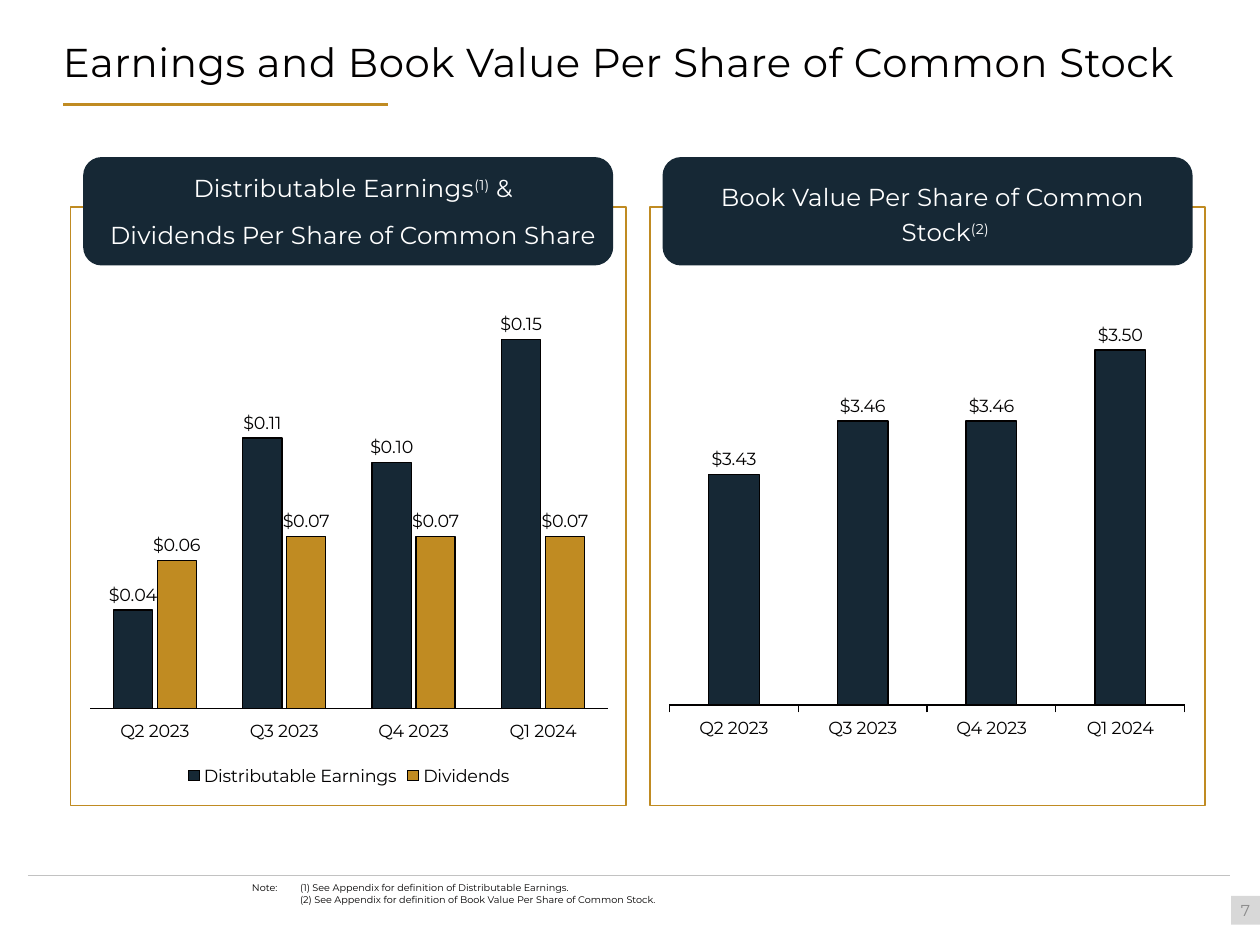
from dataclasses import dataclass

from lxml.etree import SubElement
from pptx import Presentation
from pptx.chart.data import CategoryChartData
from pptx.dml.color import RGBColor as RGB
from pptx.enum.chart import XL_CHART_TYPE as CHART, XL_LABEL_POSITION as LABEL
from pptx.enum.chart import XL_LEGEND_POSITION as LEGEND
from pptx.enum.chart import XL_TICK_LABEL_POSITION as TICK_LABEL, XL_TICK_MARK as TICK
from pptx.enum.shapes import MSO_CONNECTOR as CONN, MSO_SHAPE as SHAPE
from pptx.enum.text import MSO_ANCHOR as ANCHOR, PP_ALIGN as ALIGN
from pptx.oxml.ns import qn
from pptx.util import Cm, Pt


@dataclass(frozen=True)
class Theme:
    font: str = "Montserrat"
    ink: RGB = RGB(0x02, 0x00, 0x00)
    navy: RGB = RGB(0x16, 0x28, 0x35)
    gold: RGB = RGB(0xC0, 0x8B, 0x22)
    white: RGB = RGB(0xFF, 0xFF, 0xFF)
    rule: RGB = RGB(0xC2, 0xC2, 0xC2)
    tile: RGB = RGB(0xD8, 0xD8, 0xD8)
    muted: RGB = RGB(0x8C, 0x8C, 0x8C)
    title: float = 23
    header: float = 14
    chart: float = 10
    page: float = 9
    note: float = 5.5


T = Theme()

# Content: a paragraph is a list of (text, is_superscript) runs
TITLE = "Earnings and Book Value Per Share of Common Stock"
PAGE = "7"
NOTES = ["Note:\t(1) See Appendix for definition of Distributable Earnings.",
         "(2) See Appendix for definition of Book Value Per Share of Common Stock."]
QUARTERS = ["Q2 2023", "Q3 2023", "Q4 2023", "Q1 2024"]
DOLLARS = '"$"#,##0.00'
PANELS = [
    dict(header=[[("Distributable Earnings", False), ("(1)", True), (" &", False)],
                 [("Dividends Per Share of Common Share", False)]],
         spacing=None,
         series=[("Distributable Earnings", [0.04, 0.11, 0.10, 0.15], T.navy),
                 ("Dividends", [0.06, 0.07, 0.07, 0.07], T.gold)],
         chart_box=(1.6, 5.89, 10.87, 10.06), plot=(0.02, 0.046, 0.96, 0.788),
         scale=(0, 0.16), gap=119, overlap=-12, tick=TICK.NONE, legend=True),
    dict(header=[[("Book Value Per Share of Common Stock", False), ("(2)", True)]],
         spacing=1.2,
         series=[("Series 1", [3.43, 3.46, 3.46, 3.50], T.navy)],
         chart_box=(13.28, 5.03, 10.82, 10.06), plot=(0.02, 0.024, 0.96, 0.889),
         scale=(3.3, 3.55), gap=154, overlap=-27, tick=TICK.OUTSIDE, legend=False),
]

# Panel grid in cm
PANEL_X, PANEL_Y, PANEL_W, PANEL_H, PITCH = 1.42, 4.17, 11.2, 12.07, 11.68
HEADER_Y, HEADER_H, HEADER_INSET = 3.18, 2.16, 0.27


def box(*cm):
    return [Cm(v) for v in cm]


def set_font(font, size, color, spc=None):
    font.name, font.size, font.color.rgb = T.font, Pt(size), color
    if spc:
        font._element.set("spc", str(spc))


def set_frame(tf, margins=(0, 0, 0, 0), anchor=ANCHOR.TOP):
    tf.word_wrap, tf.vertical_anchor = True, anchor
    tf.margin_left, tf.margin_top, tf.margin_right, tf.margin_bottom = box(*margins)


def set_indent(p, left, first):
    pPr = p._p.get_or_add_pPr()
    pPr.set("marL", str(Cm(left)))
    pPr.set("indent", str(Cm(first)))


def add_line(x1, y1, x2, y2, color, width):
    line = slide.shapes.add_connector(CONN.STRAIGHT, *box(x1, y1, x2, y2))
    line.line.color.rgb, line.line.width = color, Pt(width)
    SubElement(line._element.spPr, qn("a:effectLst"))


def add_box(kind, place, fill=None, line=None, width=0.75):
    sp = slide.shapes.add_shape(kind, *box(*place))
    sp.shadow.inherit = False
    if fill is None:
        sp.fill.background()
    else:
        sp.fill.solid()
        sp.fill.fore_color.rgb = fill
    if line is None:
        sp.line.fill.background()
    else:
        sp.line.color.rgb, sp.line.width = line, Pt(width)
    return sp


def place_plot(chart, fractions):
    area = chart._chartSpace.chart.plotArea
    for old in area.findall(qn("c:layout")):
        area.remove(old)
    layout = SubElement(area, qn("c:layout"))
    area.insert(0, layout)
    manual = SubElement(layout, qn("c:manualLayout"))
    settings = [("layoutTarget", "inner"), ("xMode", "edge"), ("yMode", "edge")]
    for tag, value in settings + list(zip("xywh", fractions)):
        SubElement(manual, qn(f"c:{tag}")).set("val", str(value))


def add_columns(panel):
    data = CategoryChartData(number_format=DOLLARS)
    data.categories = QUARTERS
    for name, values, _ in panel["series"]:
        data.add_series(name, values)
    chart = slide.shapes.add_chart(CHART.COLUMN_CLUSTERED, *box(*panel["chart_box"]), data).chart
    set_font(chart.font, T.chart, T.ink)
    chart.has_title = False
    chart.has_legend = panel["legend"]
    if panel["legend"]:
        chart.legend.position, chart.legend.include_in_layout = LEGEND.BOTTOM, False
        set_font(chart.legend.font, T.chart, T.ink)

    # Axes
    val, cat = chart.value_axis, chart.category_axis
    val.minimum_scale, val.maximum_scale = panel["scale"]
    val.visible = val.has_major_gridlines = False
    cat.major_tick_mark, cat.tick_label_position = panel["tick"], TICK_LABEL.LOW
    cat.format.line.color.rgb, cat.format.line.width = T.ink, Pt(0.75)

    # Columns and their labels
    plot = chart.plots[0]
    plot.vary_by_categories = False
    plot.gap_width, plot.overlap = panel["gap"], panel["overlap"]
    for ser, (_, _, color) in zip(plot.series, panel["series"]):
        ser.format.fill.solid()
        ser.format.fill.fore_color.rgb = color
        ser.format.line.color.rgb, ser.format.line.width = T.ink, Pt(0.75)
        labels = ser.data_labels
        labels.show_value, labels.position = True, LABEL.OUTSIDE_END
        labels.number_format, labels.number_format_is_linked = DOLLARS, False
        set_font(labels.font, T.chart, T.ink)
    place_plot(chart, panel["plot"])


def add_header(panel, x):
    sp = add_box(SHAPE.ROUNDED_RECTANGLE,
                 (x + HEADER_INSET, HEADER_Y, PANEL_W - 2 * HEADER_INSET, HEADER_H), T.navy, T.navy)
    tf = sp.text_frame
    set_frame(tf, (0.2, 0, 0, 0), ANCHOR.MIDDLE)
    for i, runs in enumerate(panel["header"]):
        p = tf.add_paragraph() if i else tf.paragraphs[0]
        p.alignment, p.line_spacing = ALIGN.CENTER, panel["spacing"]
        if i:
            p.space_before = Pt(10)
        set_indent(p, 0.51, -0.51)
        set_font(p.font, T.header, T.white, 10)
        for text, raised in runs:
            r = p.add_run()
            r.text = text
            if raised:
                r.font._element.set("baseline", "30000")


prs = Presentation()
prs.slide_width, prs.slide_height = Cm(25.4), Cm(19.05)
slide = prs.slides.add_slide(prs.slide_layouts[6])

# Rules, title and page number
add_line(0.56, 17.65, 24.79, 17.65, T.rule, 0.5)
add_line(1.27, 2.11, 7.82, 2.11, T.gold, 1.5)
tf = slide.shapes.add_textbox(*box(1.27, 0.53, 23.14, 2.16)).text_frame
set_frame(tf, (0, 0.13, 0.25, 0.13))
p = tf.paragraphs[0]
p.text, p.line_spacing = TITLE, Pt(30)
set_font(p.font, T.title, T.ink, 30)

tf = add_box(SHAPE.RECTANGLE, (24.82, 18.06, 0.58, 0.58), T.tile).text_frame
set_frame(tf, anchor=ANCHOR.MIDDLE)
p = tf.paragraphs[0]
p.text, p.alignment = PAGE, ALIGN.CENTER
set_font(p.font, T.page, T.muted)

# Chart panels
for i, panel in enumerate(PANELS):
    x = PANEL_X + i * PITCH
    add_columns(panel)
    add_box(SHAPE.RECTANGLE, (x, PANEL_Y, PANEL_W, PANEL_H), line=T.gold, width=1)
    add_header(panel, x)

# Footnotes
tf = slide.shapes.add_textbox(*box(5.08, 17.78, 19.33, 0.48)).text_frame
set_frame(tf)
for i, text in enumerate(NOTES):
    p = tf.add_paragraph() if i else tf.paragraphs[0]
    p.text = text
    set_indent(p, 0.97, 0 if i else -0.97)
    set_font(p.font, T.note, T.ink)

prs.save("out.pptx")
